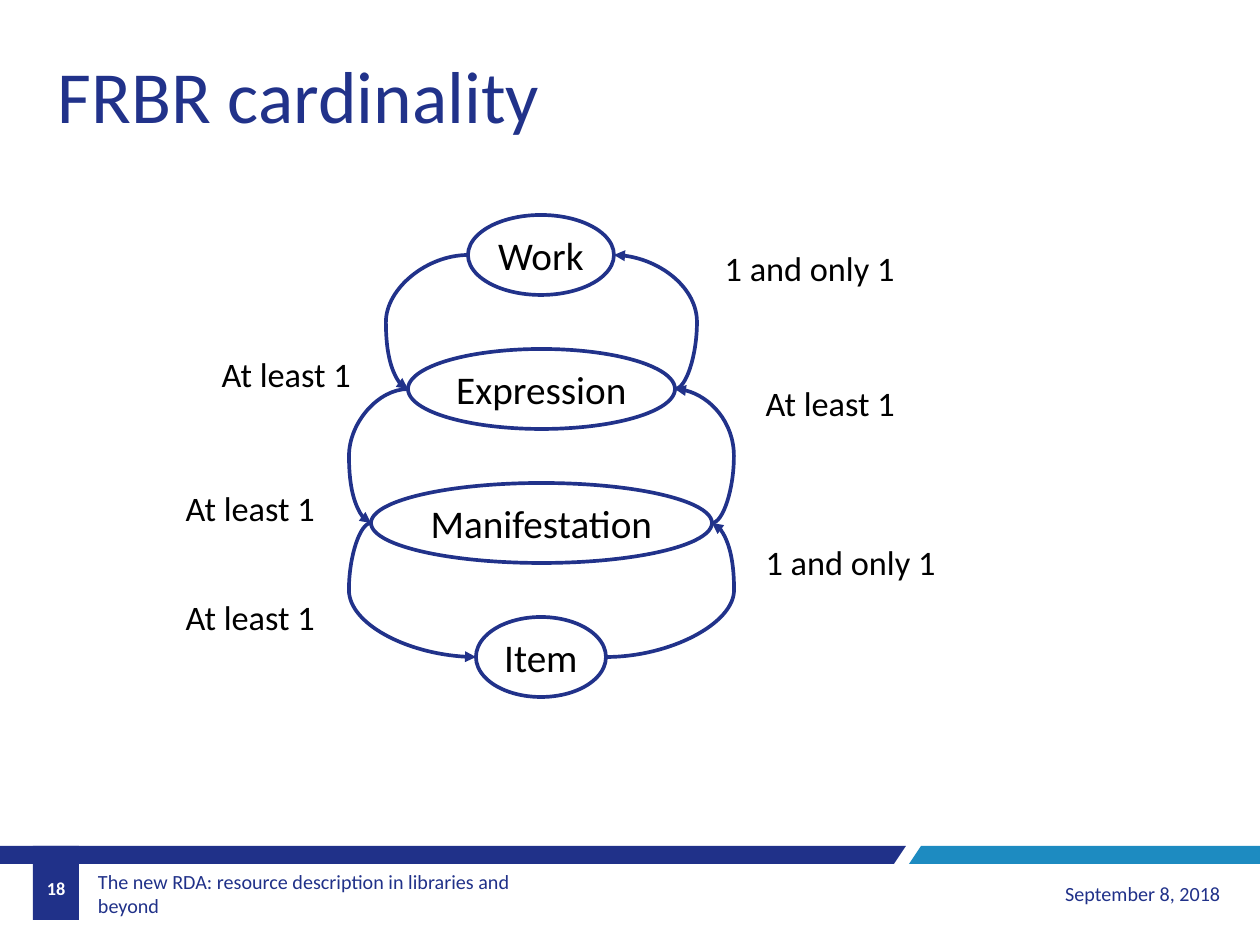
from lxml import etree
from pptx import Presentation
from pptx.dml.color import RGBColor
from pptx.enum.shapes import MSO_CONNECTOR, MSO_SHAPE
from pptx.enum.text import MSO_ANCHOR, PP_ALIGN
from pptx.oxml.ns import qn
from pptx.util import Pt

PX = 10367  # EMU per px, 88.2 px to the inch
CURVE = MSO_CONNECTOR.CURVE
ELLIPSE, RECTANGLE = MSO_SHAPE.OVAL, MSO_SHAPE.RECTANGLE
TOP, MIDDLE = MSO_ANCHOR.TOP, MSO_ANCHOR.MIDDLE
LEFT, CENTER, RIGHT = PP_ALIGN.LEFT, PP_ALIGN.CENTER, PP_ALIGN.RIGHT
COLORS = {"navy": "203189", "line": "21328A", "blue": "1D8BC1",
          "white": "FFFFFF", "black": "000000"}


def color(name):
    return RGBColor.from_string(COLORS[name])


def write(box, text, size, ink="black", align=LEFT, anchor=TOP, bold=False, wrap=False):
    frame = box.text_frame
    frame.word_wrap = wrap
    frame.vertical_anchor = anchor
    para = frame.paragraphs[0]
    para.alignment = align
    span = para.add_run()
    span.text = text
    span.font.name = "Calibri"
    span.font.size = Pt(size)
    span.font.bold = bold
    span.font.color.rgb = color(ink)


deck = Presentation()
deck.slide_width, deck.slide_height = 1260 * PX, 945 * PX
page = deck.slides.add_slide(deck.slide_layouts[5])
shapes = page.shapes

# Title
title = shapes.title
title.left, title.top, title.width, title.height = 49 * PX, 46 * PX, 505 * PX, 98 * PX
write(title, "FRBR cardinality", 60, ink="line")

# Footer bands and number tab
bands = [("navy", [(906, 846), (0, 846), (0, 864), (894, 864)]),
         ("blue", [(1260, 846), (921, 846), (909, 864), (1260, 864)])]
footer_shapes = []
for fill, points in bands:
    builder = shapes.build_freeform(*points[0], scale=PX)
    builder.add_line_segments(points[1:], close=True)
    footer_shapes.append((builder.convert_to_shape(), fill))
tab = shapes.add_shape(RECTANGLE, 33 * PX, 846 * PX, 46 * PX, 74 * PX)
footer_shapes.append((tab, "navy"))
for shape, fill in footer_shapes:
    shape.shadow.inherit = False
    shape.fill.solid()
    shape.fill.fore_color.rgb = color(fill)
    shape.line.fill.background()

# Footer texts
footers = [
    (92, 484, "The new RDA: resource description in libraries and beyond",
     dict(size=16.4, ink="navy", wrap=True)),
    (906, 323, "September 8, 2018", dict(size=16.4, ink="navy", align=RIGHT, wrap=True)),
    (33, 46, "18", dict(size=14.9, ink="white", align=CENTER, bold=True)),
]
for left, width, text, style in footers:
    box = shapes.add_textbox(left * PX, 869 * PX, width * PX, 49 * PX)
    if left == 33:
        box.top = 864 * PX
    if left == 92:
        box.text_frame.margin_left = box.text_frame.margin_right = 6 * PX
    write(box, text, anchor=MIDDLE, **style)

# Entities, stacked on one axis
AXIS, FIRST_TOP, STEP, HEIGHT = 541, 215, 134, 80
entities = [("Work", 146), ("Expression", 267), ("Manifestation", 341), ("Item", 130)]
ellipses = []
for row, (name, width) in enumerate(entities):
    ellipse = shapes.add_shape(ELLIPSE, (AXIS - width // 2) * PX,
                               (FIRST_TOP + row * STEP) * PX, width * PX, HEIGHT * PX)
    ellipse.shadow.inherit = False
    ellipse.fill.solid()
    ellipse.fill.fore_color.rgb = color("white")
    ellipse.line.color.rgb = color("line")
    ellipse.line.width = Pt(3)
    write(ellipse, name, 32, align=CENTER, anchor=MIDDLE)
    ellipses.append(ellipse)

# Curved arrows: down on the left side, up on the right side
BULGE = 22  # how far a curve swings past the wider ellipse
LEFT_SITE, RIGHT_SITE = 2, 6
for upper, lower in zip(ellipses, ellipses[1:]):
    for start, end, side, site in ((upper, lower, -1, LEFT_SITE), (lower, upper, 1, RIGHT_SITE)):
        edges = [e.left + (e.width if side > 0 else 0) for e in (start, end)]
        middles = [e.top + e.height // 2 for e in (start, end)]
        arrow = shapes.add_connector(CURVE, edges[0], middles[0], edges[1], middles[1])
        arrow.line.color.rgb = color("line")
        arrow.line.width = Pt(3)
        etree.SubElement(arrow.line._get_or_add_ln(), qn("a:tailEnd"), type="triangle")
        properties = arrow._element.spPr
        etree.SubElement(properties, qn("a:effectLst"))

        # Place the bend and glue both ends
        outer = max(edges) if side > 0 else min(edges)
        bend = (outer + side * BULGE * PX - edges[0]) / (edges[1] - edges[0])
        guides = properties.find(qn("a:prstGeom")).get_or_add_avLst()
        etree.SubElement(guides, qn("a:gd"), name="adj1", fmla=f"val {round(bend * 100000)}")
        glue = arrow._element.nvCxnSpPr.cNvCxnSpPr
        for tag, ellipse in (("a:stCxn", start), ("a:endCxn", end)):
            etree.SubElement(glue, qn(tag), id=str(ellipse.shape_id), idx=str(site))

# Cardinality labels
ONE, MANY = ("1 and only 1", 190), ("At least 1", 148)
labels = [(716, 243, ONE), (757, 378, MANY), (757, 537, ONE),
          (213, 349, MANY), (177, 483, MANY), (177, 592, MANY)]
for left, top, (text, width) in labels:
    box = shapes.add_textbox(left * PX, top * PX, width * PX, 50 * PX)
    write(box, text, 28)

deck.save("out.pptx")
